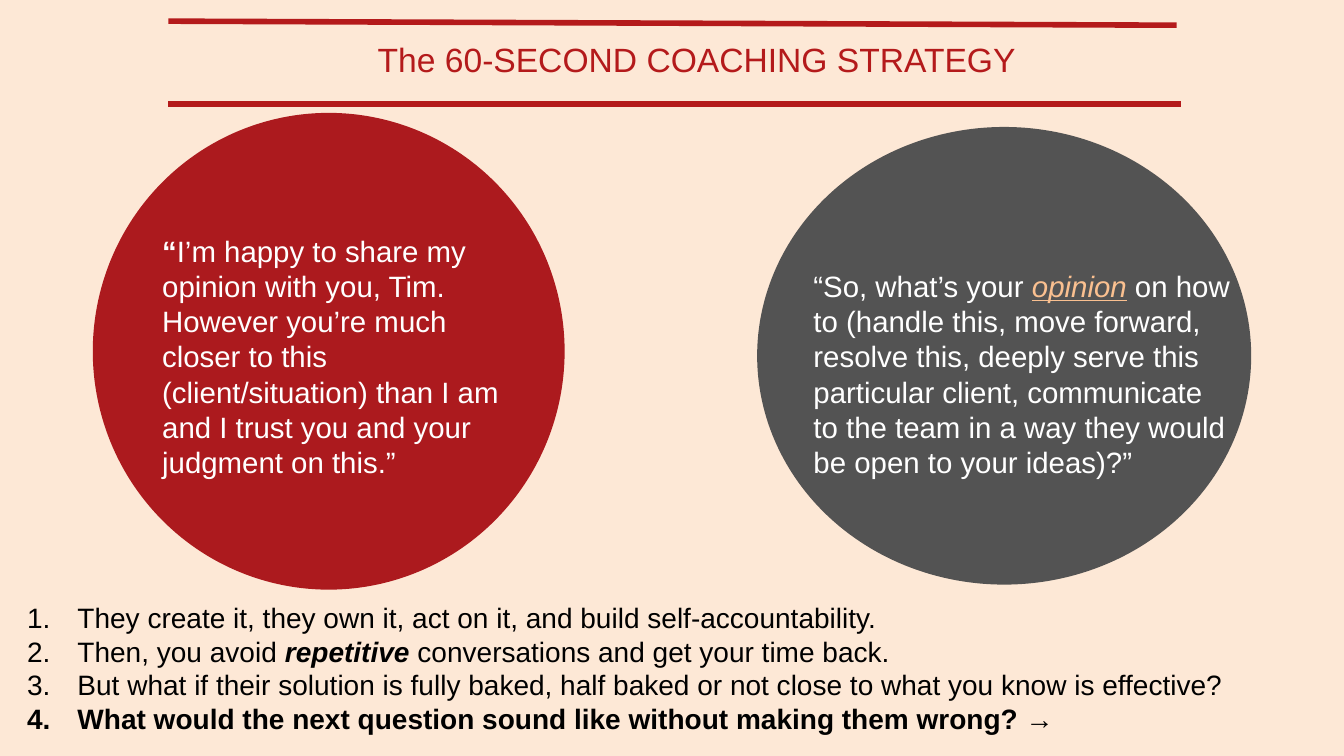
from lxml import etree
from pptx import Presentation
from pptx import util as u
from pptx.dml import color
from pptx.enum import shapes, text
from pptx.oxml import ns

FONT = "Arial"
BACKGROUND = "FDE8D6"
RED = "B41A1B"
WHITE = "FFFFFF"
PEACH = "FAC090"
BLACK = "000000"


def rgb(value):
    return color.RGBColor.from_string(value)


def style_paragraph(paragraph, size, font_color):
    paragraph.font.name = FONT
    paragraph.font.size = u.Pt(size)
    paragraph.font.color.rgb = rgb(font_color)


def add_runs(paragraph, runs):
    """Each run is its wording and the font settings that differ."""
    for wording, settings in runs:
        run = paragraph.add_run()
        run.text = wording
        for name, value in settings.items():
            if name == "color":
                run.font.color.rgb = rgb(value)
            else:
                setattr(run.font, name, value)


def number_paragraph(paragraph):
    properties = paragraph._p.get_or_add_pPr()
    properties.set("marL", str(u.Inches(0.5)))
    properties.set("indent", str(-u.Inches(0.5)))
    etree.SubElement(properties, ns.qn("a:buFont"), typeface="+mj-lt")
    etree.SubElement(properties, ns.qn("a:buAutoNum"), type="arabicPeriod")


def add_text(parent, box, paragraphs, size, font_color, centered=False, numbered=False):
    shape = parent.add_textbox(*map(u.Inches, box))
    frame = shape.text_frame
    frame.word_wrap = True
    frame.auto_size = text.MSO_AUTO_SIZE.SHAPE_TO_FIT_TEXT
    for index, runs in enumerate(paragraphs):
        paragraph = frame.add_paragraph() if index else frame.paragraphs[0]
        if numbered:
            number_paragraph(paragraph)
        if centered:
            paragraph.alignment = text.PP_ALIGN.CENTER
        style_paragraph(paragraph, size, font_color)
        add_runs(paragraph, runs)


def add_rule(slide, start, end):
    line = slide.shapes.add_connector(
        shapes.MSO_CONNECTOR.STRAIGHT, *map(u.Inches, start + end))
    line.line.color.rgb = rgb(RED)
    line.line.width = u.Pt(4)
    etree.SubElement(line._element.spPr, ns.qn("a:effectLst"))


def add_quote(slide, circle_box, fill, text_box, runs):
    group = slide.shapes.add_group_shape()
    circle = group.shapes.add_shape(
        shapes.MSO_SHAPE.OVAL, *map(u.Inches, circle_box))
    circle.shadow.inherit = False
    circle.fill.solid()
    circle.fill.fore_color.rgb = rgb(fill)
    circle.line.fill.background()
    add_text(group.shapes, text_box, [runs], 21, WHITE)


def main():
    presentation = Presentation()
    presentation.slide_width = u.Inches(13.33)
    presentation.slide_height = u.Inches(7.5)
    slide = presentation.slides.add_slide(presentation.slide_layouts[6])
    slide.background.fill.solid()
    slide.background.fill.fore_color.rgb = rgb(BACKGROUND)

    # Left quote
    add_quote(slide, (0.92, 1.12, 4.68, 4.73), "AC1A1E", (1.51, 2.26, 3.68, 2.57), [
        ("“", {"bold": True}),
        ("I’m happy to share my opinion with you, Tim. However you’re much closer "
         "to this (client/situation) than I am and I trust you and your judgment "
         "on this.”", {}),
    ])

    # Title between two rules
    add_text(slide.shapes, (1.87, 0.34, 10.08, 0.5),
             [[("The 60-SECOND COACHING STRATEGY", {})]], 24, RED, centered=True)
    add_rule(slide, (1.67, 0.21), (11.67, 0.25))
    add_rule(slide, (1.67, 1.03), (11.71, 1.03))

    # Right quote
    add_quote(slide, (7.51, 1.26, 4.9, 4.54), "535353", (7.97, 2.61, 4.33, 2.22), [
        ("“So, what’s your ", {}),
        ("opinion", {"color": PEACH, "italic": True, "underline": True}),
        (" on how to (handle this, move forward, resolve this, deeply serve this "
         "particular client, communicate to the team in a way they would be open "
         "to your ideas)?”", {}),
    ])

    # Numbered points
    add_text(slide.shapes, (0.17, 5.91, 13.16, 1.45), [
        [("They create it, they own it, act on it, and build self-accountability.", {})],
        [("Then, you avoid ", {}),
         ("repetitive", {"bold": True, "italic": True}),
         (" conversations and get your time back.", {})],
        [("But what if their solution is fully baked, half baked or not close to "
          "what you know is effective?", {})],
        [("What would the next question sound like without making them wrong? →",
          {"bold": True})],
    ], 20, BLACK, numbered=True)

    presentation.save("out.pptx")


if __name__ == "__main__":
    main()
